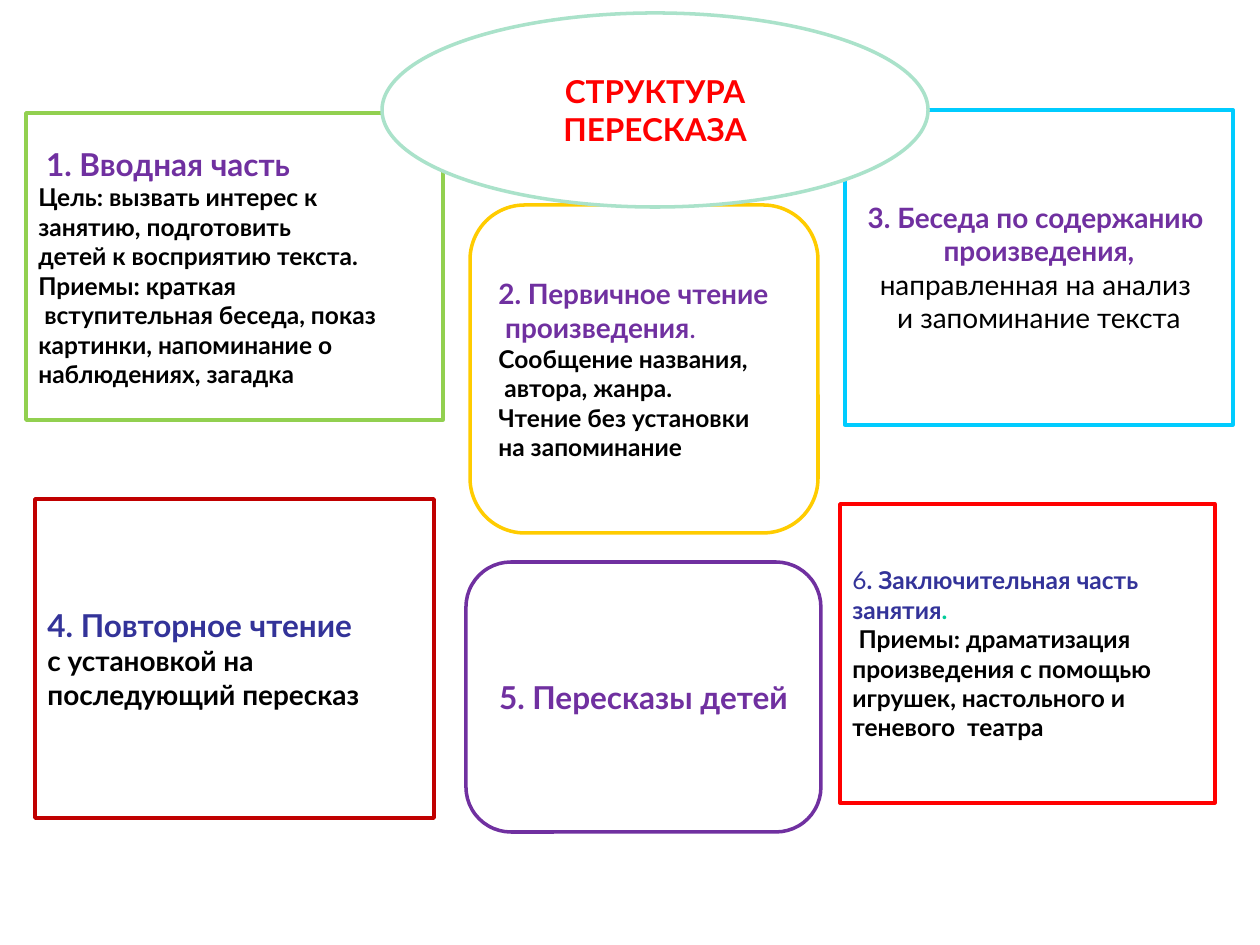
from dataclasses import dataclass

from pptx import Presentation
from pptx.dml.color import RGBColor
from pptx.enum.shapes import MSO_SHAPE
from pptx.enum.text import MSO_ANCHOR, PP_ALIGN
from pptx.util import Emu, Pt


@dataclass(frozen=True)
class Theme:
    font: str = "Lato"
    paper: str = "FFFFFF"
    ink: str = "000000"
    purple: str = "7030A0"
    indigo: str = "333399"
    red: str = "FF0000"
    crimson: str = "C00000"
    cyan: str = "00CCFF"
    yellow: str = "FFCC00"
    green: str = "92D050"
    mint: str = "AAE2CA"
    teal: str = "00CC99"
    title: int = 18
    heading: int = 16
    body: int = 14
    border: int = 2


def px(n):
    return Emu(round(n * 914400 / 126))


class Board:
    def __init__(self, slide, theme):
        self.slide = slide
        self.theme = theme

    def panel(self, kind, box, border, paragraphs, align=PP_ALIGN.LEFT):
        sp = self.slide.shapes.add_shape(kind, *map(px, box))
        sp.shadow.inherit = False
        sp.fill.solid()
        sp.fill.fore_color.rgb = RGBColor.from_string(self.theme.paper)
        sp.line.color.rgb = RGBColor.from_string(border)
        sp.line.width = Pt(self.theme.border)
        tf = sp.text_frame
        tf.word_wrap = True
        tf.vertical_anchor = MSO_ANCHOR.MIDDLE
        for i, runs in enumerate(paragraphs):
            p = tf.add_paragraph() if i else tf.paragraphs[0]
            p.alignment = align
            for run in runs:
                self.run(p, *run)

    def run(self, p, text, size, color, bold=True):
        r = p.add_run()
        r.text = text
        r.font.name = self.theme.font
        r.font.size = Pt(size)
        r.font.bold = bold
        r.font.color.rgb = RGBColor.from_string(color)


def lines(size, color, *texts, bold=True):
    return [[(text, size, color, bold)] for text in texts]


def main():
    prs = Presentation()
    prs.slide_width, prs.slide_height = px(1260), px(945)
    t = Theme()
    s = Board(prs.slides.add_slide(prs.slide_layouts[6]), t)
    rect, rounded = MSO_SHAPE.RECTANGLE, MSO_SHAPE.ROUNDED_RECTANGLE

    s.panel(rect, (845, 110, 388, 315), t.cyan,
            lines(t.heading, t.purple, "3. Беседа по содержанию ", "произведения,")
            + lines(t.heading, t.ink, "направленная на анализ ",
                    "и запоминание текста", bold=False),
            PP_ALIGN.CENTER)
    s.panel(rect, (840, 504, 375, 299), t.red, [
        [("6", t.body, t.indigo, False),
         (". Заключительная часть занятия", t.body, t.indigo),
         (".", t.body, t.teal)],
        [(" ", t.body, t.ink, False), ("Приемы: драматизация", t.body, t.ink)],
        [("произведения с помощью игрушек, настольного и теневого  театра",
          t.body, t.ink)],
    ])
    s.panel(rect, (35, 499, 399, 319), t.crimson,
            lines(t.title, t.indigo, "4. Повторное чтение")
            + lines(t.heading, t.ink, "с установкой на последующий пересказ"))
    s.panel(rounded, (470, 205, 348, 328), t.yellow,
            lines(t.heading, t.purple, "2. Первичное чтение")
            + [[(" произведения", t.heading, t.purple),
                (".", t.heading, t.purple, False)]]
            + lines(t.body, t.ink, "Сообщение названия,", " автора, жанра.",
                    "Чтение без установки", "на запоминание"))
    s.panel(rect, (26, 113, 417, 307), t.green,
            lines(t.title, t.purple, " 1. Вводная часть")
            + lines(t.body, t.ink, "Цель: вызвать интерес к",
                    "занятию, подготовить", "детей к восприятию текста.",
                    "Приемы: краткая", " вступительная беседа, показ",
                    "картинки, напоминание о", "наблюдениях, загадка"))
    s.panel(MSO_SHAPE.OVAL, (382, 13, 546, 194), t.mint,
            lines(t.title, t.red, "СТРУКТУРА ПЕРЕСКАЗА"), PP_ALIGN.CENTER)
    s.panel(rounded, (466, 562, 355, 270), t.purple,
            lines(t.title, t.purple, "5. Пересказы детей"), PP_ALIGN.CENTER)

    prs.save("out.pptx")


if __name__ == "__main__":
    main()
